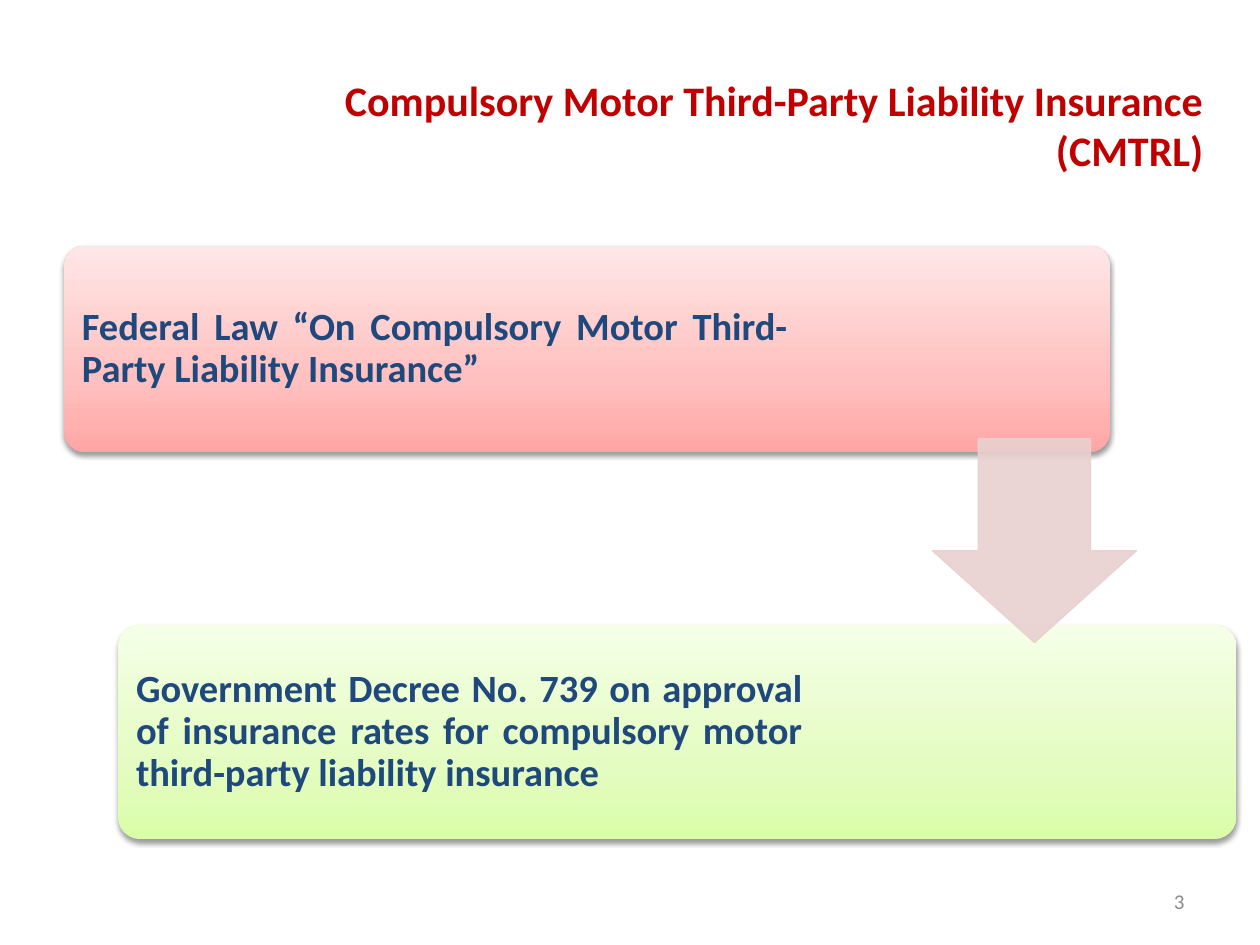
"""Build the slide on the two legal acts behind compulsory motor liability insurance."""
from lxml.etree import SubElement
from pptx import Presentation
from pptx.dml.color import RGBColor
from pptx.enum.shapes import MSO_SHAPE
from pptx.enum.text import MSO_ANCHOR, PP_ALIGN
from pptx.oxml import parse_xml
from pptx.oxml.ns import nsdecls, qn
from pptx.util import Inches, Pt

C = {"title": "C00000", "text": "1F497D", "number": "8C8C8C", "arrow": "E8D0D0",
     "red": ("FFA6A5", "FFC0BF", "FFE7E7"), "green": ("DAFDA7", "E4FCC2", "F5FFE7")}
W, H = 10, 7.5
PAD = 0.05

prs = Presentation()
prs.slide_width, prs.slide_height = Inches(W), Inches(H)
s = prs.slides.add_slide(prs.slide_layouts[5])


def place(sp, x, y, w, h):
    sp.left, sp.top, sp.width, sp.height = (Inches(v) for v in (x, y, w, h))


def write(sp, text, size, color, align, bold, inset=None):
    tf = sp.text_frame
    tf.word_wrap, tf.vertical_anchor = True, MSO_ANCHOR.MIDDLE
    if inset:
        for side in ("left", "right", "top", "bottom"):
            setattr(tf, f"margin_{side}", Inches(inset))
    p = tf.paragraphs[0]
    p.alignment = align
    r = p.add_run()
    r.text = text
    for key, value in {"name": "Calibri", "size": Pt(size), "bold": bold}.items():
        setattr(r.font, key, value)
    r.font.color.rgb = RGBColor.from_string(color)
    return p


title = s.shapes.title
place(title, 1.42, 0.44, 8.23, 1.1)
write(title, "Compulsory Motor Third-Party Liability Insurance (CMTRL)",
      24, C["title"], PP_ALIGN.RIGHT, True)

number = s.shapes.add_textbox(0, 0, 0, 0)
place(number, 7.17, 6.95, 2.33, 0.4)
write(number, "3", 12, C["number"], PP_ALIGN.RIGHT, False)

acts = [
    (0.51, 1.95, 8.3, 1.64, 5.78, "red",
     "Federal Law “On Compulsory Motor Third-Party Liability Insurance”"),
    (0.94, 4.96, 8.87, 1.7, 5.47, "green",
     "Government Decree No. 739 on approval of insurance rates for compulsory "
     "motor third-party liability insurance"),
]
for x, y, w, h, text_w, tint, text in acts:
    card = s.shapes.add_shape(MSO_SHAPE.ROUNDED_RECTANGLE, 0, 0, 0, 0)
    place(card, x, y, w, h)
    card.adjustments[0] = 0.1
    card.line.fill.background()
    card.fill.gradient()
    card.fill.gradient_angle = 90
    stops = card._element.spPr.find(qn("a:gradFill")).find(qn("a:gsLst"))
    for old in list(stops):
        stops.remove(old)
    for pos, color in zip((0, 35, 100), C[tint]):
        gs = SubElement(stops, qn("a:gs"), pos=str(pos * 1000))
        SubElement(gs, qn("a:srgbClr"), val=color)
    card._element.spPr.append(parse_xml(
        f'<a:effectLst {nsdecls("a")}><a:outerShdw blurRad="{Pt(3.1)}" dist="{Pt(1.6)}" '
        'dir="5400000" rotWithShape="0"><a:srgbClr val="000000"><a:alpha val="38000"/>'
        '</a:srgbClr></a:outerShdw></a:effectLst>'))
    label = s.shapes.add_textbox(0, 0, 0, 0)
    place(label, x + PAD, y + PAD, text_w, h - 2 * PAD)
    p = write(label, text, 22, C["text"], PP_ALIGN.JUSTIFY, True, 0.09)
    p.line_spacing = 0.9

arrow = s.shapes.add_shape(MSO_SHAPE.DOWN_ARROW, 0, 0, 0, 0)
place(arrow, 7.4, 3.48, 1.62, 1.62)
arrow.shadow.inherit = False
arrow.adjustments[0], arrow.adjustments[1] = 0.55, 0.45
arrow.line.width = Pt(0.75)
for fill in (arrow.fill, arrow.line.fill):
    fill.solid()
    fill.fore_color.rgb = RGBColor.from_string(C["arrow"])
for clr in arrow._element.spPr.iter(qn("a:srgbClr")):
    SubElement(clr, qn("a:alpha"), val="90000")

prs.save("out.pptx")
